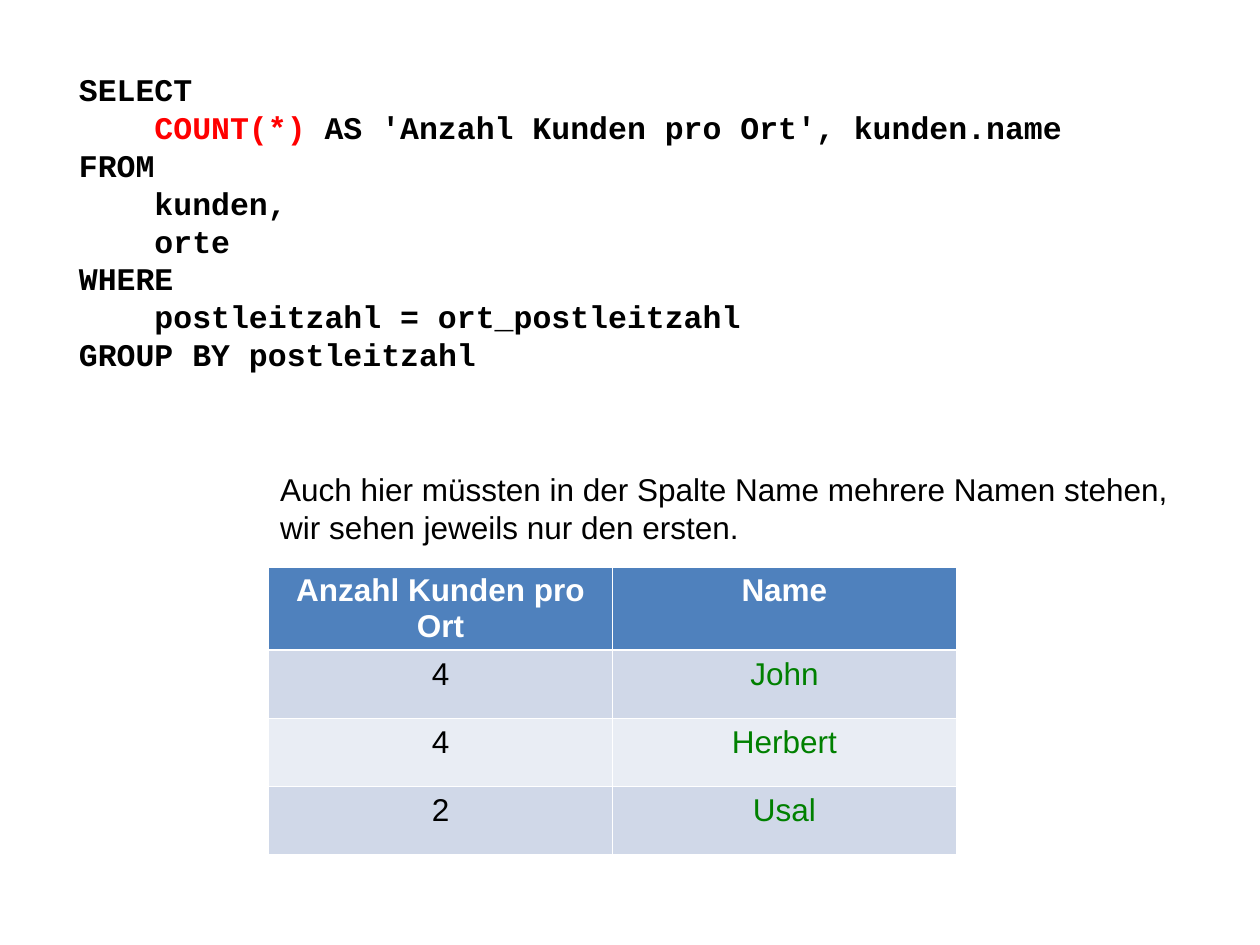
from pptx import Presentation
from pptx.dml.color import RGBColor
from pptx.enum import text
from pptx.util import Pt


def format_run(run, font_name, color, bold=False):
    run.font.name = font_name
    run.font.size = Pt(18)
    run.font.bold = bold
    run.font.color.rgb = RGBColor.from_string(color)


def add_lines(slide, left, top, width, height, lines, font_name, bold):
    shape = slide.shapes.add_textbox(Pt(left), Pt(top), Pt(width), Pt(height))
    frame = shape.text_frame
    frame.word_wrap = bold
    frame.auto_size = text.MSO_AUTO_SIZE.SHAPE_TO_FIT_TEXT
    for index, (indent, parts) in enumerate(lines):
        paragraph = frame.paragraphs[0] if index == 0 else frame.add_paragraph()
        paragraph.line_spacing = Pt(21.6)
        if indent:
            paragraph._p.get_or_add_pPr().set("marL", str(Pt(indent)))
        for wording, color in parts:
            run = paragraph.add_run()
            run.text = wording
            format_run(run, font_name, color, bold)


presentation = Presentation()
presentation.slide_width = Pt(720)
presentation.slide_height = Pt(540)
slide = presentation.slides.add_slide(presentation.slide_layouts[6])

rows = [
    ("Anzahl Kunden pro Ort", "Name"),
    ("4", "John"),
    ("4", "Herbert"),
    ("2", "Usal"),
]
row_fills = ["4F81BD", "D0D8E8", "E9EDF4", "D0D8E8"]
column_colors = ["000000", "008000"]

table = slide.shapes.add_table(4, 2, Pt(153.5), Pt(324), Pt(393), Pt(156)).table
for row_index, row in enumerate(rows):
    header = row_index == 0
    for column_index, wording in enumerate(row):
        cell = table.cell(row_index, column_index)
        cell.fill.solid()
        cell.fill.fore_color.rgb = RGBColor.from_string(row_fills[row_index])
        cell.text_frame.text = wording
        paragraph = cell.text_frame.paragraphs[0]
        paragraph.alignment = text.PP_ALIGN.CENTER
        color = "FFFFFF" if header else column_colors[column_index]
        format_run(paragraph.runs[0], "Arial", color, header)

black = "000000"
code_indent = 43.2
query = [
    (0, [("SELECT", black)]),
    (code_indent, [("COUNT(*)", "FF0000"),
                   (" AS 'Anzahl Kunden pro Ort', kunden.name", black)]),
    (0, [("FROM", black)]),
    (code_indent, [("kunden,", black)]),
    (code_indent, [("orte", black)]),
    (0, [("WHERE", black)]),
    (code_indent, [("postleitzahl = ort_postleitzahl", black)]),
    (0, [("GROUP BY postleitzahl", black)]),
]
add_lines(slide, 38, 36.7, 623.5, 181.4, query, "Courier New", True)

remark = [
    (0, [("Auch hier müssten in der Spalte Name mehrere Namen stehen,", black)]),
    (0, [("wir sehen jeweils nur den ersten.", black)]),
]
add_lines(slide, 153, 265, 527.8, 51.1, remark, "Arial", False)

presentation.save("out.pptx")
